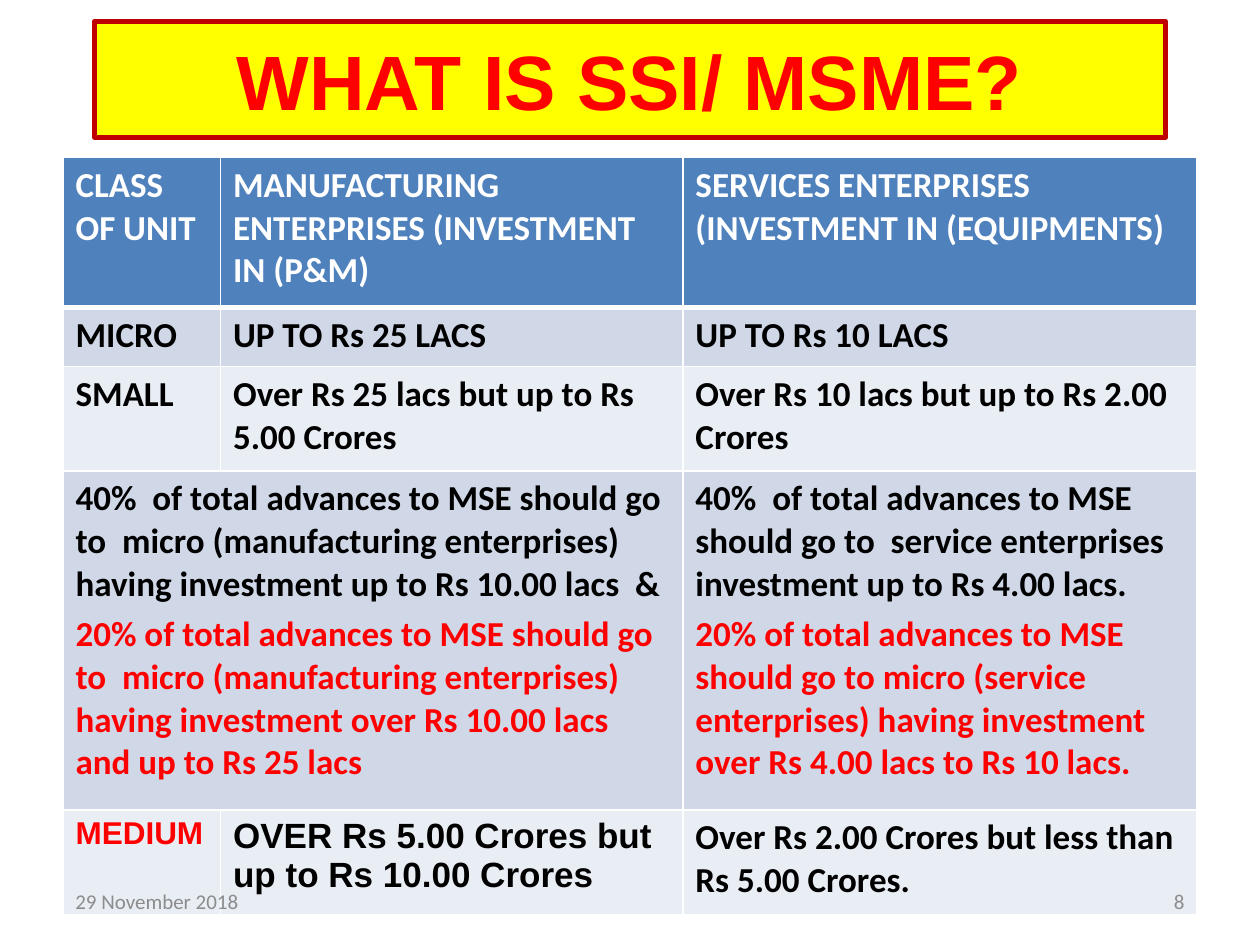
from dataclasses import dataclass

from lxml.etree import SubElement
from pptx import Presentation
from pptx.dml.color import RGBColor
from pptx.enum.text import MSO_ANCHOR as Anchor, MSO_AUTO_SIZE as AutoSize, PP_ALIGN as Align
from pptx.oxml.ns import qn
from pptx.util import Emu, Pt

PX = 9144
WHITE, BLACK, RED, GREY = "FFFFFF", "000000", "FF0000", "8C8C8C"
HEADER, BAND, LIGHT = "4F81BD", "D0D8E8", "E9EDF4"
COLS = (125, 367, 408)


@dataclass
class Para:
    """One paragraph of a table cell."""
    text: str
    color: str = BLACK
    font: str = "Calibri"
    size: int = 20


@dataclass
class Row:
    """One table row; a cell is None where the cell to its left spans it."""
    height: int
    fill: str
    cells: list[list[Para] | None]


@dataclass
class Footer:
    """A small grey text at the foot of the slide."""
    text: str
    left: int
    align: Align


ROWS = [
    Row(119, HEADER, [
        [Para("CLASS OF UNIT", WHITE)],
        [Para("MANUFACTURING ENTERPRISES (INVESTMENT IN (P&M)", WHITE)],
        [Para("SERVICES ENTERPRISES (INVESTMENT IN (EQUIPMENTS)", WHITE)]]),
    Row(47, BAND, [
        [Para("MICRO")], [Para("UP TO Rs 25 LACS")], [Para("UP TO Rs 10 LACS")]]),
    Row(83, LIGHT, [
        [Para("SMALL")],
        [Para("Over Rs 25 lacs but up to Rs 5.00 Crores")],
        [Para("Over Rs 10 lacs but up to Rs 2.00 Crores")]]),
    Row(269, BAND, [
        [Para("40%  of total advances to MSE should go to  micro (manufacturing "
              "enterprises) having investment up to Rs 10.00 lacs  &"),
         Para("20% of total advances to MSE should go to  micro (manufacturing "
              "enterprises) having investment over Rs 10.00 lacs and up to Rs 25 lacs", RED)],
        None,
        [Para("40%  of total advances to MSE should go to  service enterprises "
              "investment up to Rs 4.00 lacs."),
         Para("20% of total advances to MSE should go to micro (service enterprises) "
              "having investment over Rs 4.00 lacs to Rs 10 lacs.", RED)]]),
    Row(83, LIGHT, [
        [Para("MEDIUM", RED, "Arial", 18)],
        [Para("OVER Rs 5.00 Crores but up to Rs 10.00 Crores", font="Arial")],
        [Para("Over Rs 2.00 Crores but less than Rs 5.00 Crores.")]]),
]
FOOTERS = [Footer("29 November 2018", 50, Align.LEFT), Footer("8", 717, Align.RIGHT)]


def px(n: int) -> Emu:
    """Turn px into EMU."""
    return Emu(n * PX)


def rgb(color: str) -> RGBColor:
    """Turn a hex string into a colour."""
    return RGBColor.from_string(color)


def write(p, text: str, *, size: int, color: str, font: str = "Calibri",
          bold: bool = False, align: Align = Align.LEFT, before: float = 0) -> None:
    """Write formatted text into a paragraph."""
    p.alignment, p.space_before = align, Pt(before)
    r = p.add_run()
    r.text = text
    r.font.name, r.font.size, r.font.bold = font, Pt(size), bold
    r.font.color.rgb = rgb(color)


def add_title(s, text: str) -> None:
    """Place and format the title placeholder."""
    sp = s.shapes.title
    sp.left, sp.top, sp.width, sp.height = map(px, (75, 17, 850, 92))
    sp.fill.solid()
    sp.fill.fore_color.rgb = rgb("FFFF00")
    sp.line.color.rgb, sp.line.width = rgb("C00000"), Pt(3)
    tf = sp.text_frame
    tf.auto_size, tf.vertical_anchor = AutoSize.NONE, Anchor.MIDDLE
    write(tf.paragraphs[0], text, size=44, color=RED, font="Arial", bold=True,
          align=Align.CENTER)


def add_border(cell, side: str, width: int) -> None:
    """Draw a white border on one side of a cell."""
    ln = SubElement(cell._tc.get_or_add_tcPr(), qn(f"a:ln{side}"), w=str(Pt(width)))
    SubElement(SubElement(ln, qn("a:solidFill")), qn("a:srgbClr"), val=WHITE)


def format_cell(cell, row: int, fill: str) -> None:
    """Set the borders and fill of a cell, with a thick rule below the header."""
    widths = {"L": 1, "R": 1, "T": 3 if row == 1 else 1, "B": 3 if row == 0 else 1}
    for side, width in widths.items():
        add_border(cell, side, width)
    cell.fill.solid()
    cell.fill.fore_color.rgb = rgb(fill)


def add_limits_table(s, rows: list[Row]) -> None:
    """Add the table of investment limits."""
    height = sum(row.height for row in rows)
    table = s.shapes.add_table(len(rows), len(COLS), px(50), px(125),
                               px(sum(COLS)), px(height)).table
    for col, width in zip(table.columns, COLS):
        col.width = px(width)
    for i, row in enumerate(rows):
        table.rows[i].height = px(row.height)
        for j, paras in enumerate(row.cells):
            cell = table.cell(i, j)
            format_cell(cell, i, row.fill)
            if paras is None:
                table.cell(i, j - 1).merge(cell)
                continue
            tf = cell.text_frame
            for k, para in enumerate(paras):
                p = tf.add_paragraph() if k else tf.paragraphs[0]
                write(p, para.text, size=para.size, color=para.color, font=para.font,
                      bold=True, before=para.size / 5)


def add_footer(s, footer: Footer) -> None:
    """Add one footer text."""
    tf = s.shapes.add_textbox(px(footer.left), px(695), px(233), px(40)).text_frame
    tf.word_wrap, tf.vertical_anchor = True, Anchor.MIDDLE
    write(tf.paragraphs[0], footer.text, size=12, color=GREY, align=footer.align)


def main() -> None:
    """Build the slide and save it."""
    prs = Presentation()
    prs.slide_width, prs.slide_height = px(1000), px(750)
    s = prs.slides.add_slide(prs.slide_layouts[5])
    add_title(s, "WHAT IS SSI/ MSME?")
    add_limits_table(s, ROWS)
    for footer in FOOTERS:
        add_footer(s, footer)
    prs.save("out.pptx")


if __name__ == "__main__":
    main()
